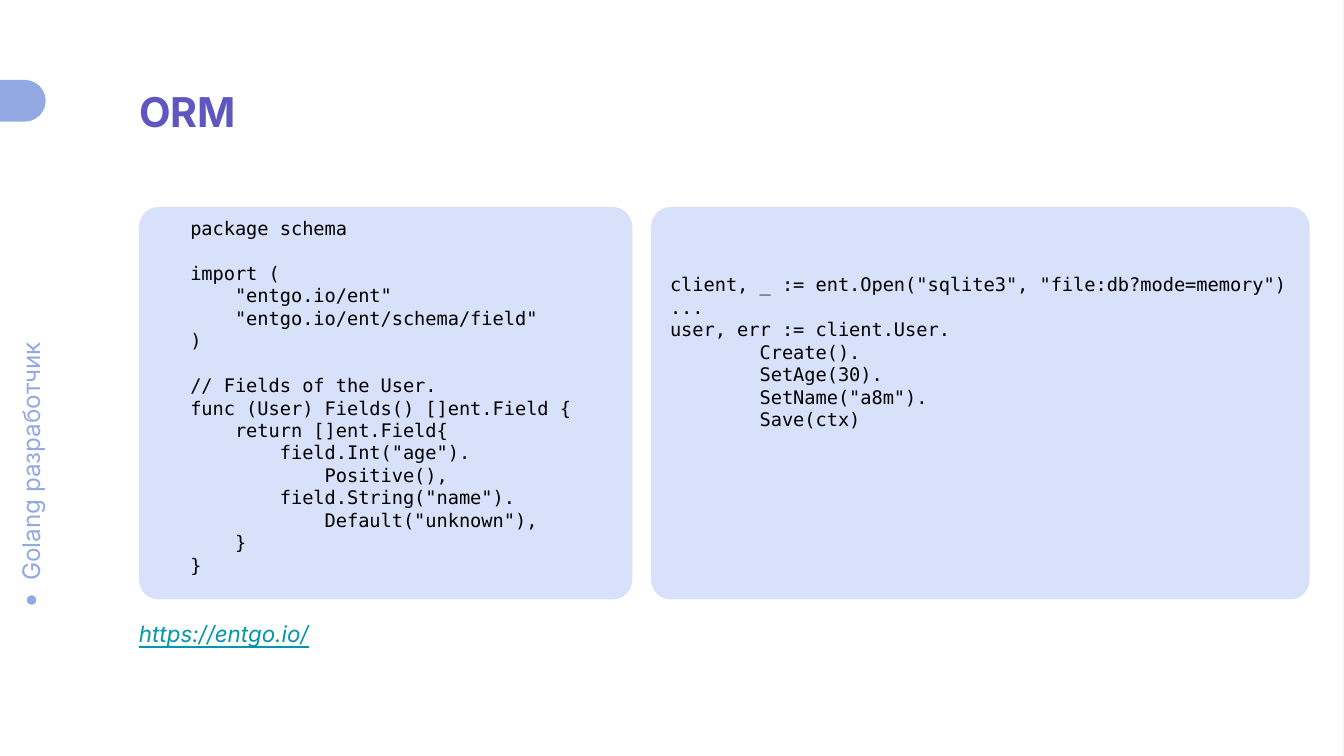
from pptx import Presentation
from pptx.dml.color import RGBColor
from pptx.enum.shapes import MSO_SHAPE
from pptx.enum.text import MSO_ANCHOR, MSO_AUTO_SIZE, PP_ALIGN
from pptx.util import Pt

RECT, OVAL, ROUND = MSO_SHAPE.RECTANGLE, MSO_SHAPE.OVAL, MSO_SHAPE.ROUNDED_RECTANGLE
TOP, MIDDLE = MSO_ANCHOR.TOP, MSO_ANCHOR.MIDDLE
LEFT, NO_FIT = PP_ALIGN.LEFT, MSO_AUTO_SIZE.NONE
PX = 4572  # 200 px to the inch
SANS, MONO = "Inter", "DejaVu Sans Mono"
CODE_LINE = 12  # height of an empty code line, in points
COLORS = {
    "back": "F1F4FF", "page": "FFFFFF", "accent": "92A9E2", "title": "6056C2",
    "link": "0097A7", "panel": "D7E1F9", "code": "000000",
}
SCHEMA_CODE = """package schema

import (
    "entgo.io/ent"
    "entgo.io/ent/schema/field"
)

// Fields of the User.
func (User) Fields() []ent.Field {
    return []ent.Field{
        field.Int("age").
            Positive(),
        field.String("name").
            Default("unknown"),
    }
}"""
CLIENT_CODE = """client, _ := ent.Open("sqlite3", "file:db?mode=memory")
...
user, err := client.User.
        Create().
        SetAge(30).
        SetName("a8m").
        Save(ctx)"""


def write(sp, text, size, color, font=SANS, bold=False, italic=False, underline=False,
          anchor=TOP, insets=(20, 20, 20, 20), indent=0):
    """Fill a shape with one paragraph per line; an empty line becomes space before."""
    tf = sp.text_frame
    tf.word_wrap = True
    tf.auto_size = NO_FIT
    tf.vertical_anchor = anchor
    tf.margin_left, tf.margin_top, tf.margin_right, tf.margin_bottom = (v * PX for v in insets)
    p, gap = tf.paragraphs[0], 0
    for i, line in enumerate(text.split("\n")):
        if not line:
            gap += CODE_LINE
            continue
        if i:
            p = tf.add_paragraph()
        p.alignment = LEFT
        p.space_before, gap = Pt(gap), 0
        if indent:
            pPr = p._p.get_or_add_pPr()
            pPr.set("marL", str(indent * PX))
            pPr.set("indent", "0")
        r = p.add_run()
        r.text = line
        r.font.name, r.font.size = font, Pt(size)
        r.font.bold, r.font.italic, r.font.underline = bold, italic, underline
        r.font.color.rgb = RGBColor.from_string(COLORS[color])


def add_block(shapes, kind, box, color):
    sp = shapes.add_shape(kind, *(v * PX for v in box))
    sp.shadow.inherit = False
    sp.fill.solid()
    sp.fill.fore_color.rgb = RGBColor.from_string(COLORS[color])
    sp.line.fill.background()
    return sp


prs = Presentation()
prs.slide_width, prs.slide_height = 2000 * PX, 1125 * PX
s = prs.slides.add_slide(prs.slide_layouts[5])
s.background.fill.solid()
s.background.fill.fore_color.rgb = RGBColor.from_string(COLORS["back"])

# Page and side strip
add_block(s.shapes, RECT, (-2, 0, 2000, 1125), "page")
course = s.shapes.add_textbox(-154 * PX, 642 * PX, 400 * PX, 84 * PX)
course.rotation = 270
write(course, "Golang разработчик", 13, "accent")
add_block(s.shapes, OVAL, (40, 886, 14, 14), "accent")
tab = add_block(s.shapes, ROUND, (-76, 119, 144, 62), "accent")
tab.adjustments[0] = 0.5

# Title, in front of the page
title = s.shapes.title
title.left, title.top, title.width, title.height = 187 * PX, 118 * PX, 1224 * PX, 94 * PX
write(title, "ORM", 22, "title", bold=True, insets=(20, 10, 20, 10))
tab.element.addnext(title.element)

link = s.shapes.add_textbox(187 * PX, 903 * PX, 1202 * PX, 122 * PX)
write(link, "https://entgo.io/", 12, "link", italic=True, underline=True)

# Code panels
for left, width, code, anchor, top_inset, indent in (
    (207, 734, SCHEMA_CODE, MIDDLE, 0, 48),
    (969, 980, CLIENT_CODE, TOP, 90, 0),
):
    panel = add_block(s.shapes, ROUND, (left, 308, width, 584), "panel")
    panel.adjustments[0] = 0.05
    write(panel, code, 10, "code", font=MONO, anchor=anchor,
          insets=(20, top_inset, 20, 20), indent=indent)

prs.save("out.pptx")
